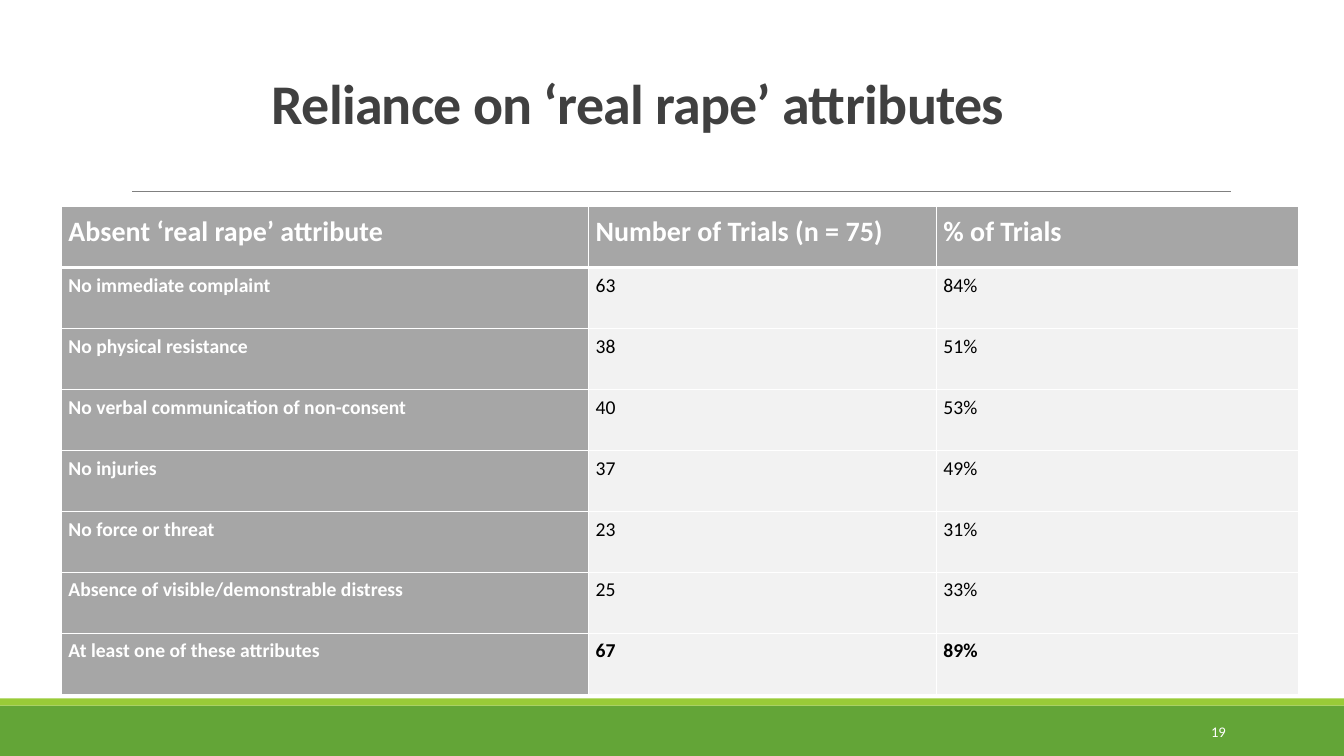
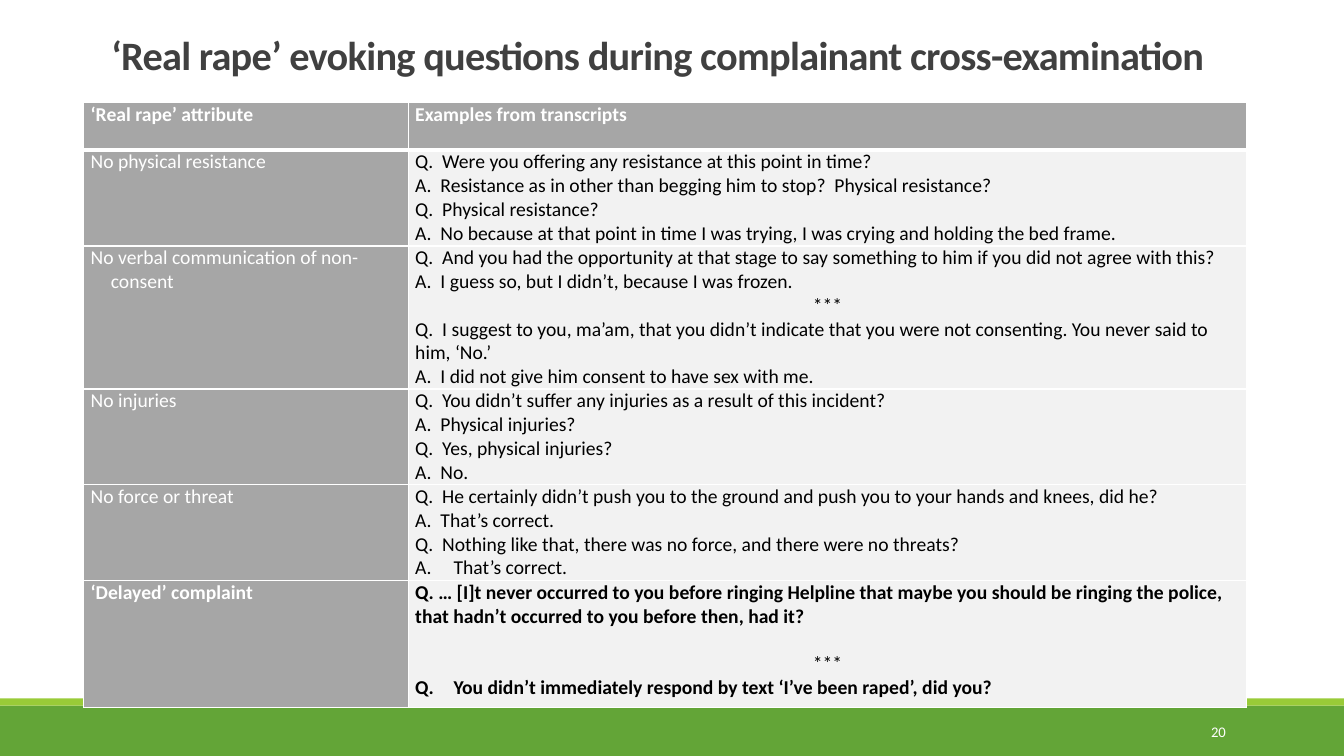
from pptx import Presentation
from pptx import util as u
from pptx.dml.color import RGBColor
from pptx.enum import shapes, text
from pptx.oxml import parse_xml
from pptx.oxml.ns import nsdecls

# Shared style
PX = 9144  # 100 px to the inch
FONT = "Calibri"
WHITE, BLACK, DARK = "FFFFFF", "000000", "404040"
GREEN, LIME, RULE = "63A537", "99CB38", "808080"
HEAD_FILL, BODY_FILL = "A6A6A6", "F2F2F2"
CENTER, RIGHT = text.PP_ALIGN.CENTER, text.PP_ALIGN.RIGHT
MIDDLE, BOTTOM = text.MSO_ANCHOR.MIDDLE, text.MSO_ANCHOR.BOTTOM
HANGING = {"indent": 20}
SPACED = {"line_spacing": 1.25, "after": 12, **HANGING}

# Content of the first slide
TRIALS_TITLE = "Reliance on ‘real rape’ attributes"
TRIALS_HEAD = ["Absent ‘real rape’ attribute", "Number of Trials (n = 75)", "% of Trials"]
TRIALS = [
    ("No immediate complaint", "63", "84%"),
    ("No physical resistance", "38", "51%"),
    ("No verbal communication of non-consent", "40", "53%"),
    ("No injuries", "37", "49%"),
    ("No force or threat", "23", "31%"),
    ("Absence of visible/demonstrable distress", "25", "33%"),
    ("At least one of these attributes", "67", "89%"),
]

# Content of the second slide: a line is text, or text with its own format
QUESTIONS_TITLE = "‘Real rape’ evoking questions during complainant cross-examination"
QUESTIONS_HEAD = ["‘Real rape’ attribute", "Examples from transcripts"]
LETTER_A = {"indent": 38, "number": 1}
LETTER_Q = {"indent": 38, "number": 17}
QUESTIONS = [
    ("No physical resistance", [
        "Q.  Were you offering any resistance at this point in time?",
        "A.  Resistance as in other than begging him to stop?  Physical resistance?",
        "Q.  Physical resistance?",
        "A.  No because at that point in time I was trying, I was crying and holding the bed frame.",
    ]),
    ("No verbal communication of non-consent", [
        "Q.  And you had the opportunity at that stage to say something to him "
        "if you did not agree with this?",
        "A.  I guess so, but I didn’t, because I was frozen.",
        ("***", {"align": CENTER}),
        "Q.  I suggest to you, ma’am, that you didn’t indicate that you were not consenting. "
        "You never said to him, ‘No.’",
        "A.  I did not give him consent to have sex with me.",
    ]),
    ("No injuries", [
        "Q.  You didn’t suffer any injuries as a result of this incident?",
        "A.  Physical injuries?",
        "Q.  Yes, physical injuries?",
        "A.  No.",
    ]),
    ("No force or threat", [
        "Q.  He certainly didn’t push you to the ground and push you to your hands and knees, did he?",
        "A.  That’s correct.",
        "Q.  Nothing like that, there was no force, and there were no threats?",
        ("That’s correct.", LETTER_A),
    ]),
    ("‘Delayed’ complaint", [
        "Q. … [I]t never occurred to you before ringing Helpline that maybe you should be "
        "ringing the police, that hadn’t occurred to you before then, had it?",
        ("***", {"align": CENTER, "bold": False, "before": 17}),
        ("You didn’t immediately respond by text ‘I’ve been raped’, did you?", LETTER_Q),
    ]),
]


def px(*lengths):
    return [round(length * PX) for length in lengths]


def color(value):
    return RGBColor.from_string(value)


def format_para(para, words, size=14, fill=BLACK, bold=False, align=None, line_spacing=None,
                before=0, after=0, indent=0, number=None, spacing=None):
    para.alignment = align
    para.line_spacing = line_spacing
    para.space_before, para.space_after = u.Pt(before), u.Pt(after)
    props = para._p.get_or_add_pPr()
    if indent:
        props.set("marL", str(indent * PX))
        props.set("indent", str(-indent * PX))
    if number:
        props.append(parse_xml(
            f'<a:buAutoNum {nsdecls("a")} type="alphaUcPeriod" startAt="{number}"/>'))
    span = para.add_run()
    span.text = words
    font = span.font
    font.name, font.size, font.bold = FONT, u.Pt(size), bold
    font.color.rgb = color(fill)
    if spacing:
        span._r.get_or_add_rPr().set("spc", str(spacing))


def write(frame, lines, **style):
    """Write one text or a list of lines; a line's own format overrides style."""
    for index, line in enumerate([lines] if isinstance(lines, str) else lines):
        words, own = (line, {}) if isinstance(line, str) else line
        para = frame.add_paragraph() if index else frame.paragraphs[0]
        format_para(para, words, **{**style, **own})


def add_text(page, place, words, anchor, **style):
    frame = page.shapes.add_textbox(*px(*place)).text_frame
    frame.word_wrap = True
    frame.vertical_anchor = anchor
    write(frame, words, **style)


def add_band(page, top, height, fill):
    band = page.shapes.add_shape(shapes.MSO_SHAPE.RECTANGLE, *px(0, top, 1333.33, height))
    band.shadow.inherit = False
    band.fill.solid()
    band.fill.fore_color.rgb = color(fill)
    band.line.fill.background()


def add_rule(page):
    rule = page.shapes.add_connector(shapes.MSO_CONNECTOR.STRAIGHT, *px(131, 190, 1221, 190))
    rule.line.color.rgb = color(RULE)
    rule.line.width = u.Pt(0.5)
    rule._element.spPr.append(parse_xml(f'<a:effectLst {nsdecls("a")}/>'))


def add_page(deck, title, place, size, number):
    page = deck.slides.add_slide(deck.slide_layouts[6])
    add_band(page, 700, 50, GREEN)
    add_band(page, 693, 7, LIME)
    add_text(page, place, title, BOTTOM, size=size, fill=DARK, bold=True,
             align=CENTER, line_spacing=0.85, spacing=-50)
    add_text(page, (1083, 706, 143, 40), number, MIDDLE, size=10.5, fill=WHITE, align=RIGHT)
    return page


def add_borders(cell, row):
    """White lines of 1 pt, with 3 pt between the header and the body."""
    widths = {"L": 1, "R": 1, "T": 3 if row == 1 else 1, "B": 3 if row == 0 else 1}
    for index, (side, width) in enumerate(widths.items()):
        cell._tc.get_or_add_tcPr().insert(index, parse_xml(
            f'<a:ln{side} {nsdecls("a")} w="{u.Pt(width)}"><a:solidFill>'
            f'<a:srgbClr val="{WHITE}"/></a:solidFill></a:ln{side}>'))


def add_grid(page, left, top, widths, heights, rows, style_of):
    """Draw a table; style_of(row, column) gives the text format of a cell."""
    table = page.shapes.add_table(len(heights), len(widths),
                                  *px(left, top, sum(widths), sum(heights))).table
    table.first_row = table.horz_banding = False
    for column, width in zip(table.columns, px(*widths)):
        column.width = width
    for line, height in zip(table.rows, px(*heights)):
        line.height = height
    for r, values in enumerate(rows):
        for c, value in enumerate(values):
            cell = table.cell(r, c)
            cell.margin_left, cell.margin_top, cell.margin_right, cell.margin_bottom = px(7, 0, 7, 0)
            is_label = r == 0 or c == 0
            cell.fill.solid()
            cell.fill.fore_color.rgb = color(HEAD_FILL if is_label else BODY_FILL)
            add_borders(cell, r)
            write(cell.text_frame, value, fill=WHITE if is_label else BLACK, **style_of(r, c))


def trials_style(row, column):
    is_bold = row in (0, len(TRIALS)) or column == 0
    return {"size": 14 if row else 20, "bold": is_bold, **SPACED}


def questions_style(row, column):
    is_bold = row in (0, len(QUESTIONS))
    return {"bold": is_bold, **(HANGING if row == 0 or column == 0 else {})}


def main():
    deck = Presentation()
    deck.slide_width, deck.slide_height = px(1333.33, 750)

    # Trials by absent attribute
    page = add_page(deck, TRIALS_TITLE, (69, 35, 1128, 105), 40, "19")
    add_rule(page)
    rows = [TRIALS_HEAD, *TRIALS]
    add_grid(page, 61, 205, [523, 345, 359], [484 / len(rows)] * len(rows), rows, trials_style)

    # Questions from transcripts
    page = add_page(deck, QUESTIONS_TITLE, (92, 0, 1121, 83), 28.8, "20")
    add_grid(page, 83, 102, [322, 832], [47, 95, 142, 95, 95, 126],
             [QUESTIONS_HEAD, *QUESTIONS], questions_style)

    deck.save("out.pptx")


if __name__ == "__main__":
    main()
